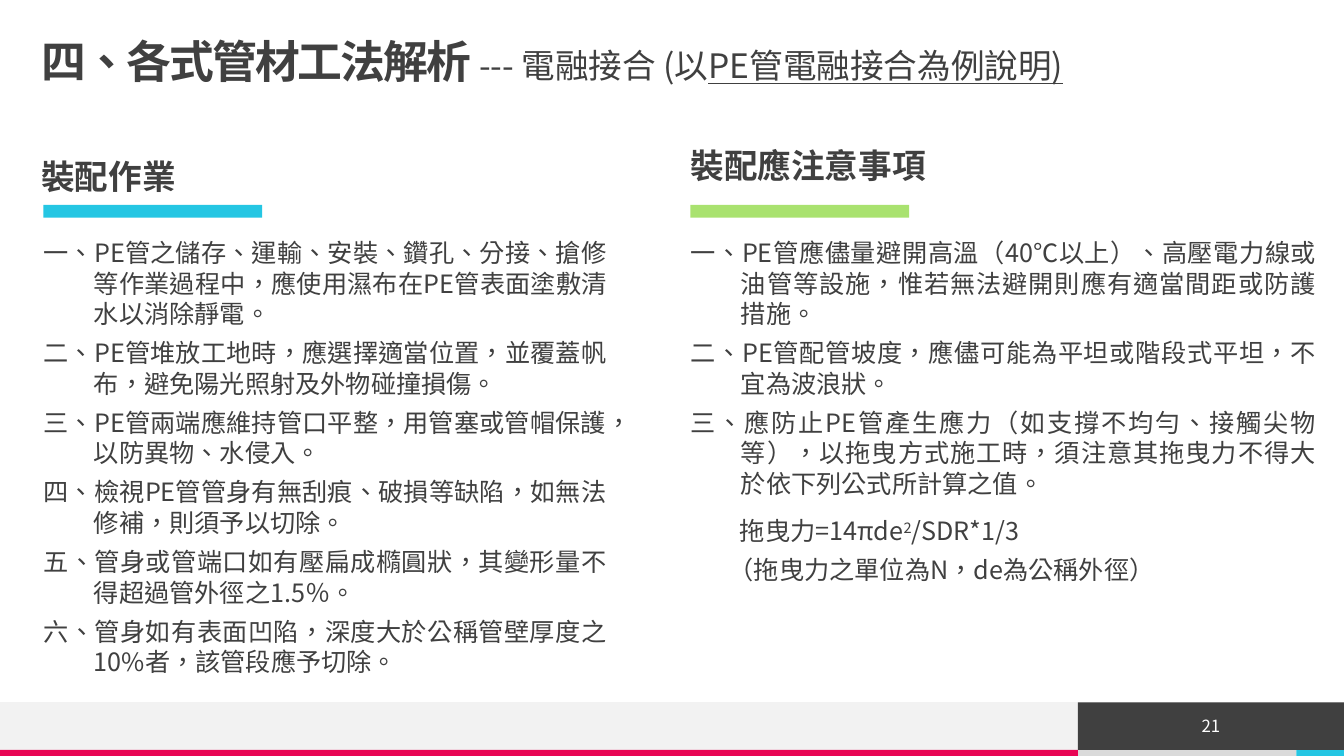
from pptx import Presentation
from pptx.dml.color import RGBColor
from pptx.enum.shapes import MSO_CONNECTOR, MSO_SHAPE
from pptx.enum.text import MSO_ANCHOR, MSO_AUTO_SIZE, PP_ALIGN
from pptx.util import Pt
from lxml.etree import SubElement
from pptx.oxml.ns import qn

THEME = {
    "font": "Noto Sans CJK TC",
    "dark": "404040", "white": "FFFFFF", "pale": "F2F2F2", "grey": "DADADA",
    "cyan": "25C6E3", "green": "A9E26F", "pink": "E80554",
    "title": 32, "heading": 24, "body": 18, "number": 12,
    "body_line": 21.85,
}

TITLE = [
    ("四、各式管材工法解析 ", {"size": THEME["title"], "bold": True, "spc": -150}),
    ("--- 電融接合 (以", {"size": THEME["heading"], "bold": False}),
    ("PE管電融接合為例說明)", {"size": THEME["heading"], "bold": False, "underline": True}),
]
ASSEMBLY = [
    "一、PE管之儲存、運輸、安裝、鑽孔、分接、搶修等作業過程中，應使用濕布在PE管表面塗敷清水以消除靜電。",
    "二、PE管堆放工地時，應選擇適當位置，並覆蓋帆布，避免陽光照射及外物碰撞損傷。",
    "三、PE管兩端應維持管口平整，用管塞或管帽保護，以防異物、水侵入。",
    "四、檢視PE管管身有無刮痕、破損等缺陷，如無法修補，則須予以切除。",
    "五、管身或管端口如有壓扁成橢圓狀，其變形量不得超過管外徑之1.5％。",
    "六、管身如有表面凹陷，深度大於公稱管壁厚度之10%者，該管段應予切除。",
]
CAUTIONS = [
    "一、PE管應儘量避開高溫（40℃以上）、高壓電力線或油管等設施，惟若無法避開則應有適當間距或防護措施。",
    "二、PE管配管坡度，應儘可能為平坦或階段式平坦，不宜為波浪狀。",
    "三、應防止PE管產生應力（如支撐不均勻、接觸尖物等），以拖曳方式施工時，須注意其拖曳力不得大於依下列公式所計算之值。",
]
FORMULA = [("拖曳力=14πde", {}), ("2", {"baseline": 30000}), ("/SDR*1/3", {})]
FORMULA_NOTE = "（拖曳力之單位為N，de為公稱外徑）"
PAGE = "21"

COLUMNS = [
    {"heading": "裝配作業", "heading_box": (29.5, 108.7), "line": 31.5, "x": 31, "width": 402.5,
     "height": 320, "bar": "cyan", "items": ASSEMBLY, "formula": False},
    {"heading": "裝配應注意事項", "heading_box": (493.2, 105.1), "line": 27.5, "x": 493.2, "width": 447,
     "height": 224, "bar": "green", "items": CAUTIONS, "formula": True},
]

WIDTH, HEIGHT = 960, 540
FOOTER_TOP, STRIP_TOP, SPLIT, CORNER = 501.8, 535.7, 770, 926


def color(name):
    return RGBColor.from_string(THEME[name])


def add_run(p, text, size, ink="dark", bold=False, underline=False, **attrs):
    r = p.add_run()
    r.text = text
    f = r.font
    f.size, f.name, f.bold, f.underline = Pt(size), THEME["font"], bold, underline
    f.color.rgb = color(ink)
    rPr = r._r.get_or_add_rPr()
    rPr.set("lang", "zh-TW")
    SubElement(rPr, qn("a:ea")).set("typeface", THEME["font"])
    for key, value in attrs.items():
        rPr.set(key, str(value))


def format_paragraph(p, align, before=0, line=1.0, margin=0, indent=0):
    p.alignment = align
    p.space_before, p.space_after = Pt(before), Pt(0)
    p.line_spacing = line
    pPr = p._p.get_or_add_pPr()
    pPr.set("marL", str(Pt(margin)))
    pPr.set("indent", str(Pt(indent)))
    SubElement(pPr, qn("a:buNone"))


def prepare(sp, box, anchor):
    sp.left, sp.top, sp.width, sp.height = map(Pt, box)
    tf = sp.text_frame
    tf.margin_left = tf.margin_top = tf.margin_right = tf.margin_bottom = 0
    tf.word_wrap, tf.auto_size, tf.vertical_anchor = True, MSO_AUTO_SIZE.NONE, anchor
    return tf


def add_rect(s, box, fill):
    sp = s.shapes.add_shape(MSO_SHAPE.RECTANGLE, *map(Pt, box))
    sp.shadow.inherit = False
    sp.fill.solid()
    sp.fill.fore_color.rgb = color(fill)
    sp.line.fill.background()
    return sp


def add_footer(s):
    strip = HEIGHT - STRIP_TOP
    band = STRIP_TOP - FOOTER_TOP
    add_rect(s, (SPLIT, STRIP_TOP, CORNER - SPLIT, strip), "grey")
    add_rect(s, (0, FOOTER_TOP, SPLIT, band), "pale")
    add_rect(s, (0, STRIP_TOP, SPLIT, strip), "pink")
    add_rect(s, (CORNER, STRIP_TOP, WIDTH - CORNER, strip), "cyan")
    rule = s.shapes.add_connector(MSO_CONNECTOR.STRAIGHT, Pt(WIDTH), Pt(FOOTER_TOP), 0, Pt(FOOTER_TOP))
    rule.line.color.rgb = color("pale")
    rule.line.width = Pt(0.5)
    SubElement(rule._element.spPr, qn("a:effectLst"))
    box = (SPLIT, FOOTER_TOP, WIDTH - SPLIT, band)
    p = prepare(add_rect(s, box, "dark"), box, MSO_ANCHOR.MIDDLE).paragraphs[0]
    format_paragraph(p, PP_ALIGN.CENTER)
    add_run(p, PAGE, THEME["number"], "white")


def add_column(s, column, heading, body):
    tf = prepare(heading, (*column["heading_box"], 430.5, 28), MSO_ANCHOR.TOP)
    p = tf.paragraphs[0]
    format_paragraph(p, PP_ALIGN.LEFT, line=Pt(column["line"]))
    add_run(p, column["heading"], THEME["heading"], bold=True)
    add_rect(s, (column["x"], 146.4, 156.3, 9), column["bar"])

    rows = [([(text, {})], 6, 36, -36) for text in column["items"]]
    if column["formula"]:
        rows += [(FORMULA, 12, 36, -0.7), ([(FORMULA_NOTE, {})], 6, 28, -0.7)]
    tf = prepare(body, (column["x"], 169.2, column["width"], column["height"]), MSO_ANCHOR.TOP)
    for i, (runs, before, margin, indent) in enumerate(rows):
        p = tf.add_paragraph() if i else tf.paragraphs[0]
        format_paragraph(p, PP_ALIGN.JUSTIFY, before, Pt(THEME["body_line"]), margin, indent)
        for text, style in runs:
            add_run(p, text, THEME["body"], **style)


def main():
    prs = Presentation()
    prs.slide_width, prs.slide_height = Pt(WIDTH), Pt(HEIGHT)
    s = prs.slides.add_slide(prs.slide_layouts[4])
    add_footer(s)
    title, *parts = s.placeholders
    p = prepare(title, (29.5, 16.6, 893, 53.3), MSO_ANCHOR.MIDDLE).paragraphs[0]
    format_paragraph(p, PP_ALIGN.LEFT)
    for text, style in TITLE:
        add_run(p, text, **style)
    for column, heading, body in zip(COLUMNS, parts[::2], parts[1::2]):
        add_column(s, column, heading, body)
    prs.save("out.pptx")


if __name__ == "__main__":
    main()
